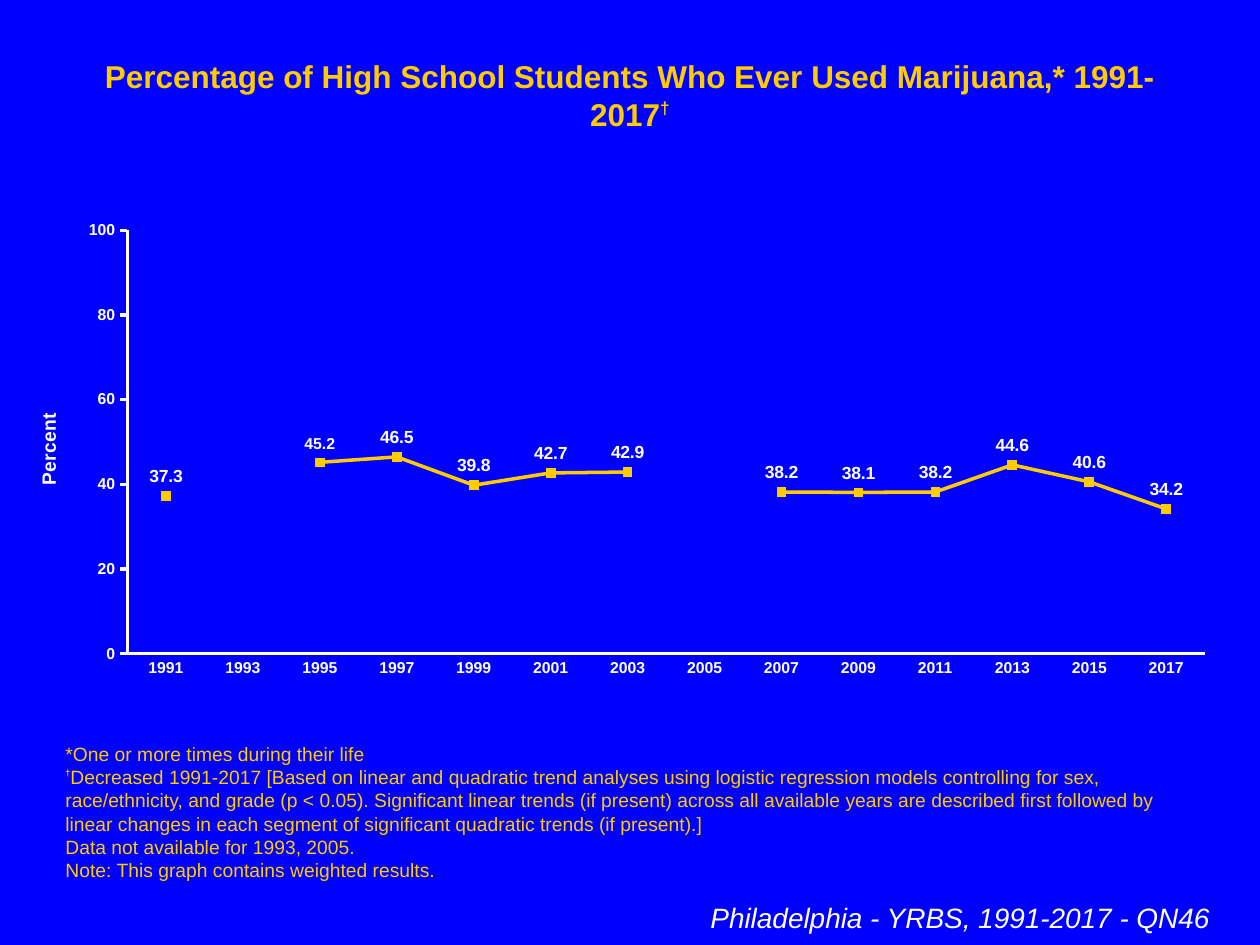
from lxml.etree import SubElement
from pptx import Presentation
from pptx.chart.data import CategoryChartData
from pptx.dml.color import RGBColor
from pptx.enum.chart import XL_CHART_TYPE, XL_LABEL_POSITION, XL_MARKER_STYLE, XL_TICK_MARK
from pptx.enum.text import MSO_ANCHOR, MSO_AUTO_SIZE, PP_ALIGN
from pptx.oxml.ns import qn
from pptx.util import Cm, Pt

COLORS = {"background": "0000FF", "gold": "FFCC00", "white": "FFFFFF"}
FONT = "Arial"
FIRST_YEAR = 1991
PERCENTAGES = [37.3, None, 45.2, 46.5, 39.8, 42.7, 42.9, None,
               38.2, 38.1, 38.2, 44.6, 40.6, 34.2]
PLOT_LAYOUT = {"layoutTarget": "inner", "xMode": "edge", "yMode": "edge",
               "x": 0.08, "y": 0.04, "w": 0.9, "h": 0.84}
TITLE = "Percentage of High School Students Who Ever Used Marijuana,* 1991-2017"
TREND_NOTE = (
    "Decreased 1991-2017 [Based on linear and quadratic trend analyses using logistic "
    "regression models controlling for sex, race/ethnicity, and grade (p < 0.05). "
    "Significant linear trends (if present) across all available years are described first "
    "followed by linear changes in each segment of significant quadratic trends (if present).]"
)


def color(name):
    """Return a named colour."""
    return RGBColor.from_string(COLORS[name])


def style_font(font, size, color_name, bold=False, italic=False):
    """Set the typeface, size, colour and style of a font."""
    font.name = FONT
    font.size = Pt(size)
    font.color.rgb = color(color_name)
    font.bold = bold
    font.italic = italic


def style_line(line, color_name):
    """Give a line its colour and the common width."""
    line.color.rgb = color(color_name)
    line.width = Pt(2)


def add_text_frame(page, box, anchor=MSO_ANCHOR.TOP):
    """Add a wrapping text box and return its frame."""
    frame = page.shapes.add_textbox(*map(Cm, box)).text_frame
    frame.word_wrap = True
    frame.auto_size = MSO_AUTO_SIZE.SHAPE_TO_FIT_TEXT
    frame.vertical_anchor = anchor
    return frame


def add_dagger(para, size, baseline, bold):
    """Append a raised dagger to a paragraph."""
    span = para.add_run()
    span.text = "†"
    span.font.size = Pt(size)
    span.font.bold = bold
    span.font._element.set("baseline", str(baseline * 1000))


def add_title(page, box):
    """Add the centred slide title."""
    para = add_text_frame(page, box).paragraphs[0]
    para.alignment = PP_ALIGN.CENTER
    style_font(para.font, 18, "gold", bold=True)
    para.add_run().text = TITLE
    add_dagger(para, 17, 40, True)


def add_footnotes(page, box):
    """Add the notes, growing upward from the bottom of the box."""
    frame = add_text_frame(page, box, MSO_ANCHOR.BOTTOM)
    notes = ["*One or more times during their life", TREND_NOTE,
             "Data not available for 1993, 2005.",
             "Note: This graph contains weighted results."]
    for index, note in enumerate(notes):
        para = frame.add_paragraph() if index else frame.paragraphs[0]
        style_font(para.font, 11, "gold")
        if note == TREND_NOTE:
            add_dagger(para, 9, 50, True)
        para.add_run().text = note


def add_survey_label(page, box):
    """Add the right-aligned survey name."""
    para = add_text_frame(page, box).paragraphs[0]
    para.text = "Philadelphia - YRBS, 1991-2017 - QN46"
    para.alignment = PP_ALIGN.RIGHT
    style_font(para.font, 16, "white", italic=True)


def set_plot_layout(chart):
    """Fix the inner plot area as fractions of the chart."""
    plot_area = chart._chartSpace.chart.plotArea
    for old_layout in plot_area.findall(qn("c:layout")):
        plot_area.remove(old_layout)
    layout = SubElement(plot_area, qn("c:layout"))
    plot_area.insert(0, layout)
    manual = SubElement(layout, qn("c:manualLayout"))
    for name, value in PLOT_LAYOUT.items():
        SubElement(manual, qn(f"c:{name}")).set("val", str(value))


def style_axes(chart):
    """Format both axes and the percent title."""
    for axis in (chart.category_axis, chart.value_axis):
        axis.has_major_gridlines = False
        axis.minor_tick_mark = XL_TICK_MARK.NONE
        style_font(axis.tick_labels.font, 9, "white", bold=True)
        style_line(axis.format.line, "white")
    chart.category_axis.major_tick_mark = XL_TICK_MARK.NONE
    percent = chart.value_axis
    percent.major_tick_mark = XL_TICK_MARK.OUTSIDE
    percent.minimum_scale, percent.maximum_scale, percent.major_unit = 0, 100, 20
    percent.tick_labels.number_format = "#,##0"
    percent.tick_labels.number_format_is_linked = False
    para = percent.axis_title.text_frame.paragraphs[0]
    para.text = "Percent"
    style_font(para.font, 11, "white", bold=True)


def style_series(series):
    """Format the trend line, its markers and its labels."""
    series.smooth = False
    style_line(series.format.line, "gold")
    marker = series.marker
    marker.style = XL_MARKER_STYLE.SQUARE
    marker.size = 5
    marker.format.fill.solid()
    marker.format.fill.fore_color.rgb = color("gold")
    marker.format.line.color.rgb = color("gold")
    labels = series.data_labels
    labels.show_value = True
    labels.number_format = "#,##0.0"
    labels.number_format_is_linked = False
    labels.position = XL_LABEL_POSITION.ABOVE
    style_font(labels.font, 10, "white", bold=True)
    small_label = series.points[2].data_label
    style_font(small_label.font, 9, "white", bold=True)
    small_label.position = XL_LABEL_POSITION.ABOVE


def add_trend_chart(page, box):
    """Add the line chart of percentages by survey year."""
    data = CategoryChartData(number_format="0.0")
    data.categories = [str(FIRST_YEAR + 2 * step) for step in range(len(PERCENTAGES))]
    data.add_series("Series 1", PERCENTAGES)
    chart = page.shapes.add_chart(XL_CHART_TYPE.LINE_MARKERS, *map(Cm, box), data).chart
    chart.has_legend = False
    chart.has_title = False
    style_font(chart.font, 18, "white")
    chart.plots[0].vary_by_categories = False
    set_plot_layout(chart)
    style_axes(chart)
    style_series(chart.plots[0].series[0])


def main():
    """Build and save the deck."""
    deck = Presentation()
    deck.slide_width, deck.slide_height = Cm(25.4), Cm(19.05)
    page = deck.slides.add_slide(deck.slide_layouts[6])
    page.background.fill.solid()
    page.background.fill.fore_color.rgb = color("background")
    add_title(page, (1.27, 1.02, 22.86, 1.02))
    add_footnotes(page, (1.07, 17.15, 23.29, 0.74))
    add_survey_label(page, (1.07, 18.03, 23.57, 0.94))
    add_trend_chart(page, (0.64, 4.24, 24.13, 10.16))
    deck.save("out.pptx")


if __name__ == "__main__":
    main()
